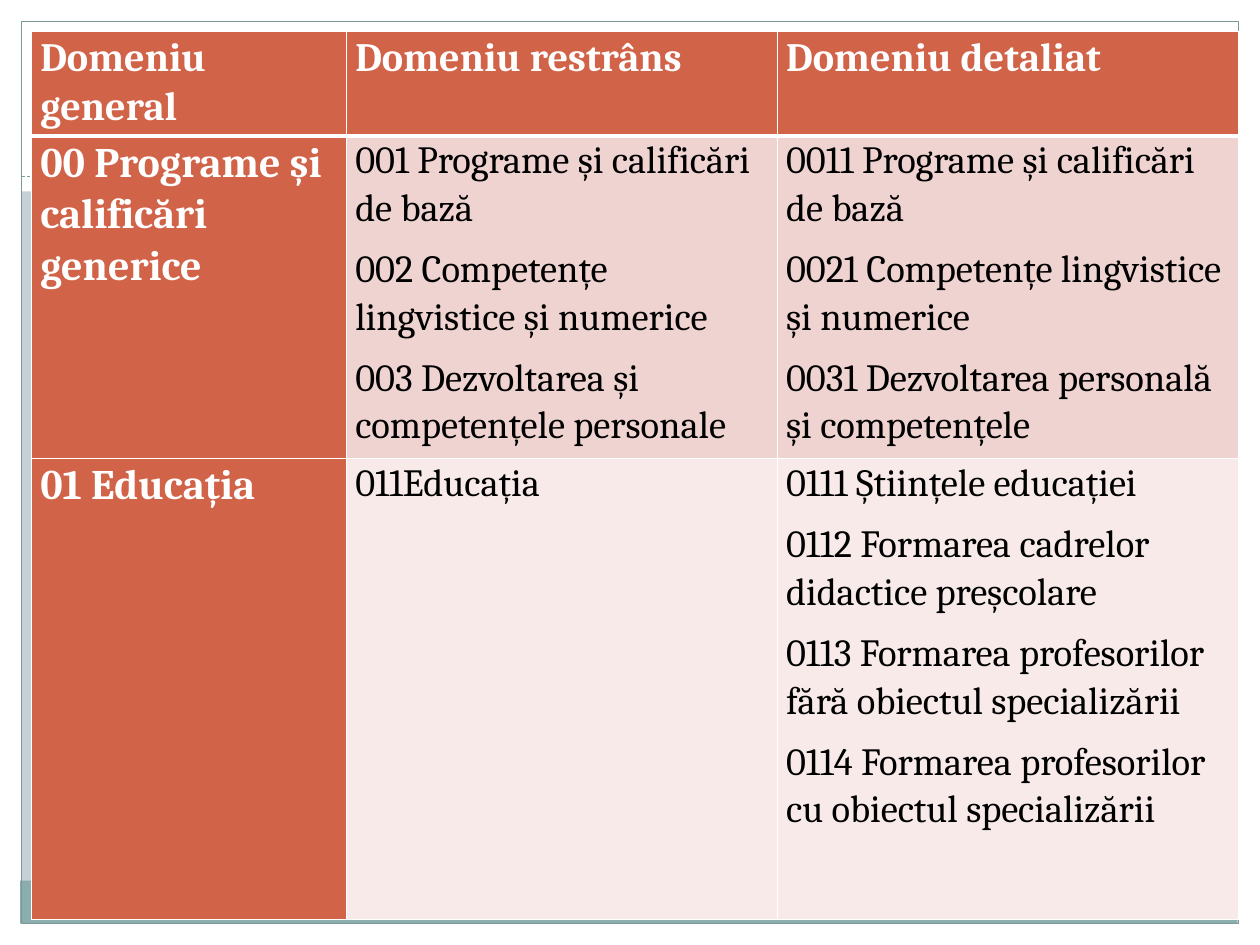
from dataclasses import dataclass

import pptx
import pptx.dml.color
import pptx.enum.dml
import pptx.enum.shapes
import pptx.oxml
import pptx.oxml.ns
import pptx.util
from pptx.util import Inches

WHITE, BLACK = "FFFFFF", "000000"
BACKDROP, RULE, FOOTER = "C5D1D7", "7C999A", "8CADAE"
ACCENT, ROSE, PALE_ROSE = "D16349", "EED3D0", "F7EAE9"


@dataclass(frozen=True)
class Panel:
    left: float
    top: float
    width: float
    height: float
    fill: str | None = WHITE
    line: str | None = None


@dataclass(frozen=True)
class DomainRow:
    height: float
    general: str
    narrow: list[str]
    detailed: list[str]
    fill: str
    general_size: int = 24
    detail_size: int = 22
    header: bool = False


PANELS = [
    Panel(0, 7.33, 10, 0.17),
    Panel(0, 0, 10, 1.52),
    Panel(0, 0, 0.17, 7.5),
    Panel(9.83, 0, 0.17, 7.5),
    Panel(0.16, 6.99, 9.66, 0.34, fill=FOOTER),
    Panel(0.17, 0.17, 9.66, 7.16, fill=None, line=RULE),
]
COLUMN_WIDTHS = [2.5, 3.42, 3.66]
DOMAINS = [
    DomainRow(0.83, "Domeniu general", ["Domeniu restrâns"], ["Domeniu detaliat"],
              ACCENT, general_size=23, detail_size=23, header=True),
    DomainRow(2.56, "00 Programe și calificări generice",
              ["001 Programe și calificări de bază",
               "002 Competențe lingvistice și numerice",
               "003 Dezvoltarea și competențele personale"],
              ["0011 Programe și calificări de bază",
               "0021 Competențe lingvistice și numerice",
               "0031 Dezvoltarea personală și competențele"],
              ROSE),
    DomainRow(3.66, "01 Educația", ["011Educația"],
              ["0111 Științele educației",
               "0112 Formarea cadrelor didactice preșcolare",
               "0113 Formarea profesorilor fără obiectul specializării",
               "0114 Formarea profesorilor cu obiectul specializării"],
              PALE_ROSE),
]


def rgb(value: str) -> pptx.dml.color.RGBColor:
    return pptx.dml.color.RGBColor.from_string(value)


def draw_panel(slide, panel: Panel) -> None:
    rectangle = slide.shapes.add_shape(
        pptx.enum.shapes.MSO_SHAPE.RECTANGLE, Inches(panel.left),
        Inches(panel.top), Inches(panel.width), Inches(panel.height))
    rectangle.shadow.inherit = False
    if panel.fill:
        rectangle.fill.solid()
        rectangle.fill.fore_color.rgb = rgb(panel.fill)
    else:
        rectangle.fill.background()
    if panel.line:
        rectangle.line.color.rgb = rgb(panel.line)
        rectangle.line.width = pptx.util.Pt(0.75)
    else:
        rectangle.line.fill.background()


def draw_dashed_rule(slide, left: float, right: float, y: float) -> None:
    rule = slide.shapes.add_connector(
        pptx.enum.shapes.MSO_CONNECTOR.STRAIGHT,
        Inches(left), Inches(y), Inches(right), Inches(y))
    rule.line.color.rgb = rgb(RULE)
    rule.line.width = pptx.util.Pt(0.75)
    rule.line.dash_style = pptx.enum.dml.MSO_LINE.SQUARE_DOT
    rule._element.spPr.append(pptx.oxml.parse_xml(
        f"<a:effectLst {pptx.oxml.ns.nsdecls('a')}/>"))


def write_paragraph(paragraph, text: str, *, size: int, color: str, bold: bool) -> None:
    paragraph.line_spacing = 1.07
    paragraph.space_after = pptx.util.Pt(8)
    run = paragraph.add_run()
    run.text = text
    run.font.name = "Cambria"
    run.font.size = pptx.util.Pt(size)
    run.font.bold = bold
    run.font.color.rgb = rgb(color)


def set_borders(cell, **widths: float) -> None:
    """Draw white borders, given in points by side: L, R, T, B."""
    properties = cell._tc.get_or_add_tcPr()
    for side, width in widths.items():
        properties.append(pptx.oxml.parse_xml(
            f'<a:ln{side} {pptx.oxml.ns.nsdecls("a")} w="{pptx.util.Pt(width)}">'
            f'<a:solidFill><a:srgbClr val="{WHITE}"/></a:solidFill></a:ln{side}>'))


def fill_cell(cell, lines: list[str], fill: str, *, top: float, bottom: float,
              **text_format) -> None:
    cell.margin_left = cell.margin_right = Inches(0.07)
    cell.margin_top = cell.margin_bottom = 0
    set_borders(cell, L=1, R=1, T=top, B=bottom)
    cell.fill.solid()
    cell.fill.fore_color.rgb = rgb(fill)
    frame = cell.text_frame
    for index, line in enumerate(lines):
        paragraph = frame.add_paragraph() if index else frame.paragraphs[0]
        write_paragraph(paragraph, line, **text_format)


def draw_domain_table(slide, left: float, top: float) -> None:
    table = slide.shapes.add_table(
        len(DOMAINS), len(COLUMN_WIDTHS), Inches(left), Inches(top),
        Inches(sum(COLUMN_WIDTHS)), Inches(sum(row.height for row in DOMAINS))).table
    table.horz_banding = False
    for column, width in zip(table.columns, COLUMN_WIDTHS):
        column.width = Inches(width)
    for index, domain in enumerate(DOMAINS):
        table.rows[index].height = Inches(domain.height)
        borders = {"top": 3 if index == 1 else 1, "bottom": 3 if domain.header else 1}
        fill_cell(table.cell(index, 0), [domain.general], ACCENT, **borders,
                  size=domain.general_size, color=WHITE, bold=True)
        for column, lines in enumerate([domain.narrow, domain.detailed], start=1):
            fill_cell(table.cell(index, column), lines, domain.fill, **borders,
                      size=domain.detail_size, bold=domain.header,
                      color=WHITE if domain.header else BLACK)


def main() -> None:
    deck = pptx.Presentation()
    deck.slide_width, deck.slide_height = Inches(10), Inches(7.5)
    slide = deck.slides.add_slide(deck.slide_layouts[6])
    slide.background.fill.solid()
    slide.background.fill.fore_color.rgb = rgb(BACKDROP)
    for panel in PANELS:
        draw_panel(slide, panel)
    draw_dashed_rule(slide, 0.17, 9.83, 1.4)
    draw_domain_table(slide, 0.25, 0.25)
    deck.save("out.pptx")


if __name__ == "__main__":
    main()
